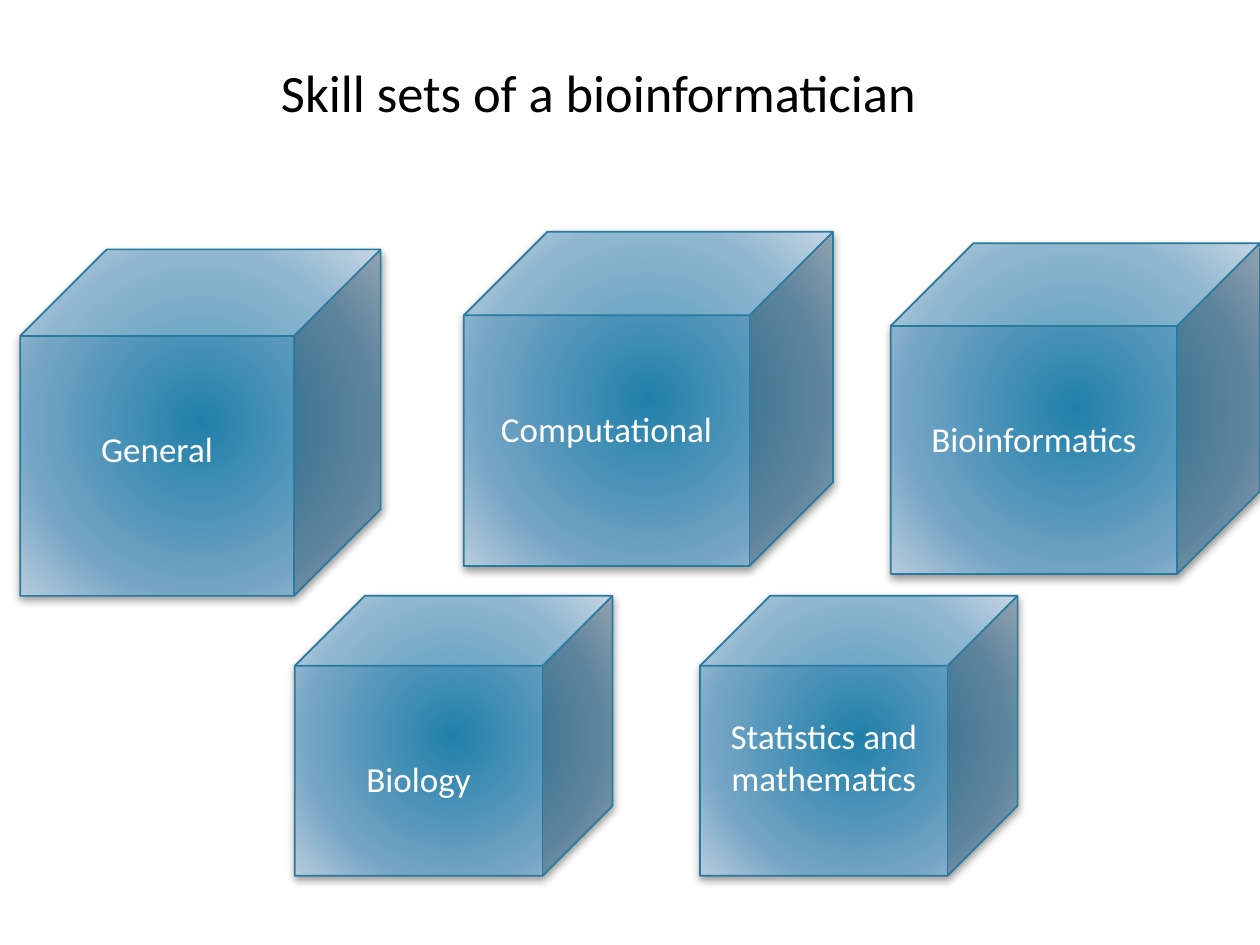
import pptx
import pptx.dml.color
import pptx.enum.shapes
import pptx.enum.text
import pptx.oxml
import pptx.oxml.ns
import pptx.util

Pt = pptx.util.Pt
NS = pptx.oxml.ns.nsdecls("a")
LINE_HEIGHT = 24.4
INSET = 3.6
STOPS = [(0, "2180AA"), (69, "75A5C5"), (100, "B8CCDC")]
CUBES = [
    ("General", 11.5, 142.5, 206, 198, 2),
    ("Computational", 265, 132.5, 211, 191, 2),
    ("Biology", 168.5, 340.5, 181.5, 160, 2),
    ("Statistics and mathematics", 400, 340.5, 181.5, 160, 1),
    ("Bioinformatics", 509, 139, 211, 189, 2),
]


def rgb(color):
    """Turn a hex string into a colour."""
    return pptx.dml.color.RGBColor.from_string(color)


def write(tf, text, size=20, color="FFFFFF", align="LEFT", font="Calibri"):
    """Write one formatted paragraph into a text frame."""
    p = tf.paragraphs[0]
    p.alignment = getattr(pptx.enum.text.PP_ALIGN, align)
    r = p.add_run()
    r.text = text
    r.font.name = font
    r.font.size = Pt(size)
    r.font.color.rgb = rgb(color)


def radial_fill(sp, stops):
    """Fill a shape with a gradient that spreads from its centre."""
    sp.fill.gradient()
    old = sp.fill._xPr.find(pptx.oxml.ns.qn("a:gradFill"))
    marks = "".join(
        f'<a:gs pos="{pos * 1000}"><a:srgbClr val="{color}"/></a:gs>' for pos, color in stops
    )
    new = pptx.oxml.parse_xml(
        f'<a:gradFill {NS} rotWithShape="1"><a:gsLst>{marks}</a:gsLst><a:path path="circle">'
        '<a:fillToRect l="100000" t="100000" r="100000" b="100000"/></a:path></a:gradFill>'
    )
    old.getparent().replace(old, new)


def drop_shadow(sp, color="000000", opacity=40, blur=5, distance=2):
    """Give a shape a soft shadow straight below it."""
    sp.shadow.inherit = False
    effects = sp._element.spPr.find(pptx.oxml.ns.qn("a:effectLst"))
    effects.append(pptx.oxml.parse_xml(
        f'<a:outerShdw {NS} blurRad="{Pt(blur)}" dist="{Pt(distance)}" dir="5400000" '
        f'rotWithShape="0"><a:srgbClr val="{color}"><a:alpha val="{opacity * 1000}"/>'
        '</a:srgbClr></a:outerShdw>'
    ))


def add_cube(slide, text, left, top, width, height, lines_above):
    """Add a shaded cube with its label some lines below the front edge."""
    sp = slide.shapes.add_shape(
        pptx.enum.shapes.MSO_SHAPE.CUBE, Pt(left), Pt(top), Pt(width), Pt(height)
    )
    radial_fill(sp, STOPS)
    sp.line.color.rgb = rgb("287A9E")
    sp.line.width = Pt(1)
    drop_shadow(sp)
    tf = sp.text_frame
    tf.word_wrap = True
    tf.vertical_anchor = pptx.enum.text.MSO_ANCHOR.TOP
    tf.margin_top = Pt(INSET + lines_above * LINE_HEIGHT)
    write(tf, text, align="CENTER")


def add_title(slide, text, left, top, width, height):
    """Add the heading as a text box."""
    tf = slide.shapes.add_textbox(Pt(left), Pt(top), Pt(width), Pt(height)).text_frame
    tf.word_wrap = False
    tf.auto_size = pptx.enum.text.MSO_AUTO_SIZE.SHAPE_TO_FIT_TEXT
    write(tf, text, size=30, color="000000")


def main():
    """Build the slide and save it."""
    prs = pptx.Presentation()
    prs.slide_width, prs.slide_height = Pt(720), Pt(540)
    slide = prs.slides.add_slide(prs.slide_layouts[6])
    for cube in CUBES:
        add_cube(slide, *cube)
    add_title(slide, "Skill sets of a bioinformatician", 153.5, 30.5, 456.5, 44)
    prs.save("out.pptx")


if __name__ == "__main__":
    main()
